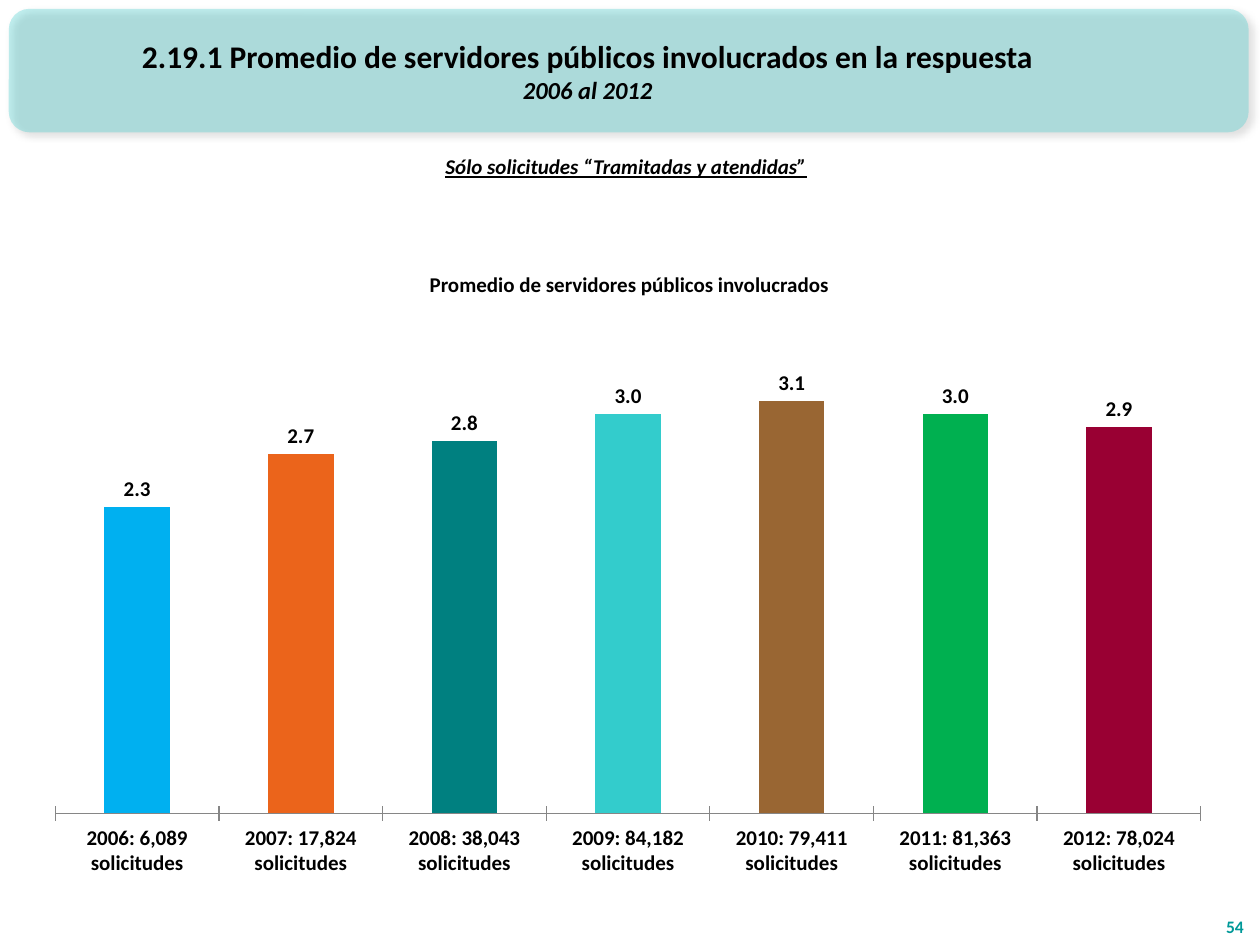
from dataclasses import dataclass, field

from lxml import etree
from pptx import Presentation
from pptx.chart.data import CategoryChartData
from pptx.dml.color import RGBColor
from pptx.enum.chart import XL_CHART_TYPE, XL_LABEL_POSITION, XL_TICK_LABEL_POSITION, XL_TICK_MARK
from pptx.enum.shapes import MSO_SHAPE
from pptx.enum.text import MSO_ANCHOR, MSO_AUTO_SIZE, PP_ALIGN
from pptx.oxml import parse_xml
from pptx.oxml.ns import nsdecls, qn
from pptx.util import Pt

COLUMNS = XL_CHART_TYPE.COLUMN_CLUSTERED
LABEL_ABOVE = XL_LABEL_POSITION.OUTSIDE_END
TICK_CROSS = XL_TICK_MARK.CROSS
LABELS_LOW = XL_TICK_LABEL_POSITION.LOW
ROUNDED = MSO_SHAPE.ROUNDED_RECTANGLE
TOP, MIDDLE, BOTTOM = MSO_ANCHOR.TOP, MSO_ANCHOR.MIDDLE, MSO_ANCHOR.BOTTOM
CENTER, RIGHT = PP_ALIGN.CENTER, PP_ALIGN.RIGHT
NO_RESIZE = MSO_AUTO_SIZE.NONE
TITLE_ONLY = 5

FONT = "Calibri"
COLORS = {"text": "000000", "number": "009999", "banner": "33CCCC",
          "axis": "868686", "series": "43A7A7"}


@dataclass(frozen=True)
class Area:
    left: float
    top: float
    width: float
    height: float

    def lengths(self) -> tuple:
        return Pt(self.left), Pt(self.top), Pt(self.width), Pt(self.height)


@dataclass(frozen=True)
class Line:
    text: str
    size: float
    color: str = "text"
    style: dict = field(default_factory=dict)


@dataclass(frozen=True)
class Note:
    area: Area
    line: Line
    align: PP_ALIGN = CENTER
    anchor: MSO_ANCHOR = TOP


@dataclass(frozen=True)
class Year:
    year: int
    requests: int
    average: float
    color: str


TITLE_AREA = Area(5.76, 6.48, 660.24, 67.68)
TITLE_LINES = [
    Line("2.19.1 Promedio de servidores públicos involucrados en la respuesta", 18),
    Line("2006 al 2012", 14, style={"italic": True}),
]
NOTES = [
    Note(Area(211.68, 151.92, 295.92, 21.6),
         Line("Promedio de servidores públicos involucrados", 12)),
    Note(Area(689.04, 510.48, 28.8, 28.8), Line("54", 10, "number"), RIGHT, BOTTOM),
    Note(Area(97.2, 84.24, 521.28, 21.6),
         Line("Sólo solicitudes “Tramitadas y atendidas”", 12,
              style={"italic": True, "underline": True})),
]
BANNER_AREA = Area(5.04, 5.04, 708.48, 70.56)
CHART_AREA = Area(18, 156.96, 681.84, 349.92)
PLOT_LAYOUT = {"x": 0.02, "y": 0.01, "w": 0.96, "h": 0.87}
YEARS = [
    Year(2006, 6089, 2.3, "00B0F0"),
    Year(2007, 17824, 2.7, "EB641B"),
    Year(2008, 38043, 2.8, "008080"),
    Year(2009, 84182, 3.0, "33CCCC"),
    Year(2010, 79411, 3.1, "996633"),
    Year(2011, 81363, 3.0, "00B050"),
    Year(2012, 78024, 2.9, "990033"),
]


def set_values(target, values: dict) -> None:
    for name, value in values.items():
        setattr(target, name, value)


def format_font(font, size: float, color: str, style: dict) -> None:
    set_values(font, {"name": FONT, "size": Pt(size), "bold": True, **style})
    font.color.rgb = RGBColor.from_string(COLORS[color])


def write_lines(box, lines: list[Line], align: PP_ALIGN, anchor: MSO_ANCHOR) -> None:
    frame = box.text_frame
    set_values(frame, {"word_wrap": True, "auto_size": NO_RESIZE, "vertical_anchor": anchor})
    for index, line in enumerate(lines):
        para = frame.add_paragraph() if index else frame.paragraphs[0]
        para.alignment = align
        span = para.add_run()
        span.text = line.text
        format_font(span.font, line.size, line.color, line.style)


def add_banner(page) -> None:
    banner = page.shapes.add_shape(ROUNDED, *BANNER_AREA.lengths())
    banner.fill.solid()
    banner.fill.fore_color.rgb = RGBColor.from_string(COLORS["banner"])
    banner.line.fill.background()
    # Transparent fill and outer shadow
    color = banner.fill._xPr.find(qn("a:solidFill"))[0]
    etree.SubElement(color, qn("a:alpha"), val="30000")
    banner._element.spPr.append(parse_xml(
        f'<a:effectLst {nsdecls("a")}>'
        f'<a:outerShdw blurRad="{Pt(4)}" dist="{Pt(3)}" dir="2700000" algn="tl" rotWithShape="0">'
        '<a:srgbClr val="000000"><a:alpha val="40000"/></a:srgbClr>'
        '</a:outerShdw></a:effectLst>'))
    # Keep the banner behind the title
    page.shapes._spTree.insert(2, banner._element)


def add_title(page) -> None:
    title = page.shapes.title
    left, top, width, height = TITLE_AREA.lengths()
    set_values(title, {"left": left, "top": top, "width": width, "height": height})
    write_lines(title, TITLE_LINES, CENTER, MIDDLE)


def add_note(page, note: Note) -> None:
    box = page.shapes.add_textbox(*note.area.lengths())
    write_lines(box, [note.line], note.align, note.anchor)


def place_plot(chart) -> None:
    plot_area = chart._chartSpace.chart.plotArea
    for old in plot_area.findall(qn("c:layout")):
        plot_area.remove(old)
    settings = {"layoutTarget": "inner", "xMode": "edge", "yMode": "edge", **PLOT_LAYOUT}
    layout = etree.Element(qn("c:layout"))
    manual = etree.SubElement(layout, qn("c:manualLayout"))
    for name, value in settings.items():
        etree.SubElement(manual, qn(f"c:{name}"), val=str(value))
    plot_area.insert(0, layout)


def add_year_chart(page) -> None:
    data = CategoryChartData(number_format="0.0")
    data.categories = [f"{item.year}: {item.requests:,} solicitudes" for item in YEARS]
    data.add_series("Series 1", [item.average for item in YEARS])
    chart = page.shapes.add_chart(COLUMNS, *CHART_AREA.lengths(), data).chart
    set_values(chart, {"has_legend": False, "has_title": False})
    format_font(chart.font, 12, "text", {})
    place_plot(chart)

    # Axes
    set_values(chart.value_axis, {"minimum_scale": 0, "maximum_scale": 4, "major_unit": 1,
                                  "has_major_gridlines": False, "visible": False})
    axis = chart.category_axis
    set_values(axis, {"major_tick_mark": TICK_CROSS, "tick_label_position": LABELS_LOW})
    axis.format.line.color.rgb = RGBColor.from_string(COLORS["axis"])
    axis.format.line.width = Pt(0.75)

    # Columns and their labels
    plot = chart.plots[0]
    set_values(plot, {"gap_width": 150, "vary_by_categories": False, "has_data_labels": True})
    set_values(plot.data_labels, {"show_value": True, "number_format": "0.0",
                                  "number_format_is_linked": False, "position": LABEL_ABOVE})
    series = plot.series[0]
    series.format.fill.solid()
    series.format.fill.fore_color.rgb = RGBColor.from_string(COLORS["series"])
    for index, item in enumerate(YEARS):
        fill = series.points[index].format.fill
        fill.solid()
        fill.fore_color.rgb = RGBColor.from_string(item.color)


def main() -> None:
    deck = Presentation()
    set_values(deck, {"slide_width": Pt(720), "slide_height": Pt(540)})
    page = deck.slides.add_slide(deck.slide_layouts[TITLE_ONLY])
    add_banner(page)
    add_title(page)
    for note in NOTES:
        add_note(page, note)
    add_year_chart(page)
    deck.save("out.pptx")


if __name__ == "__main__":
    main()
